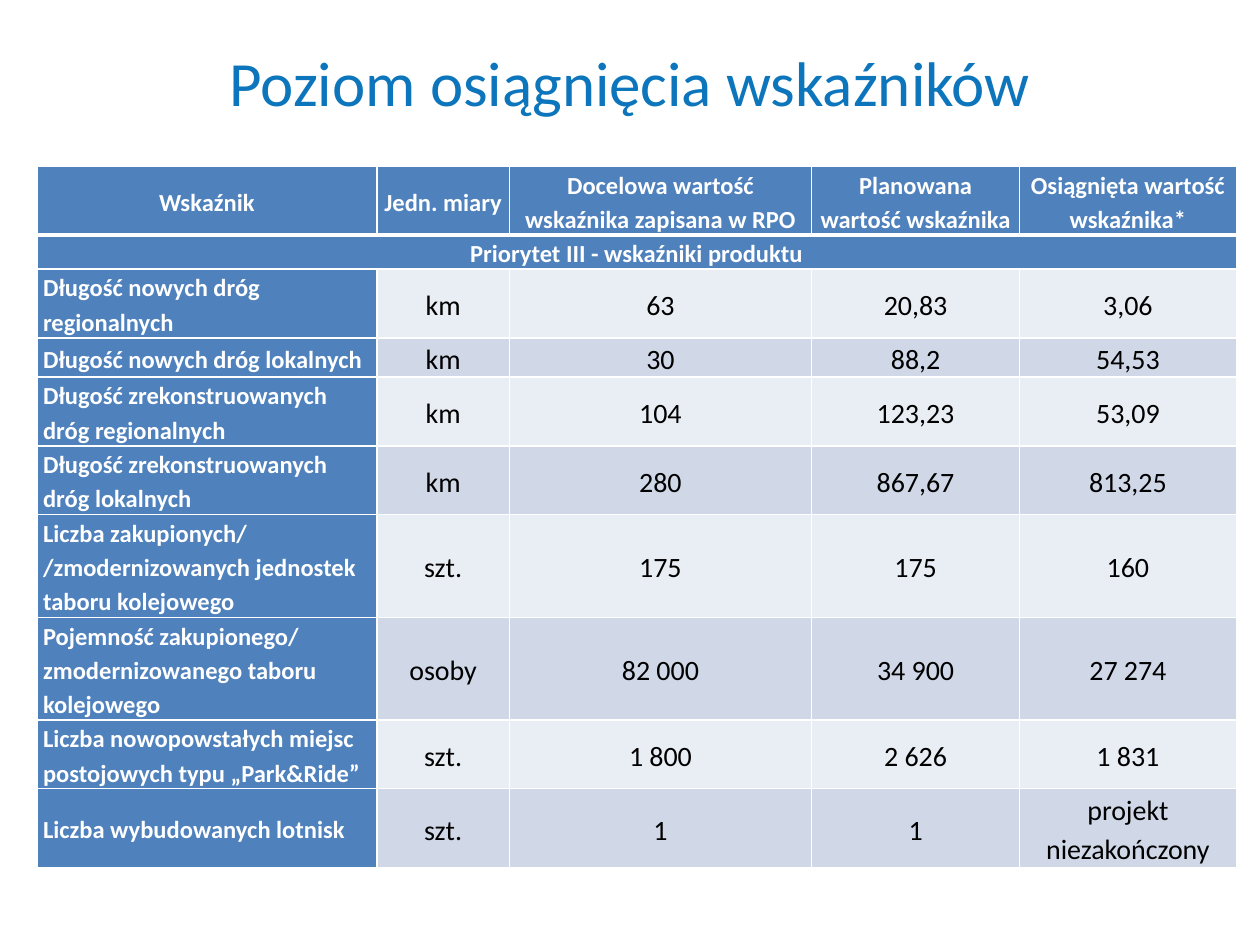
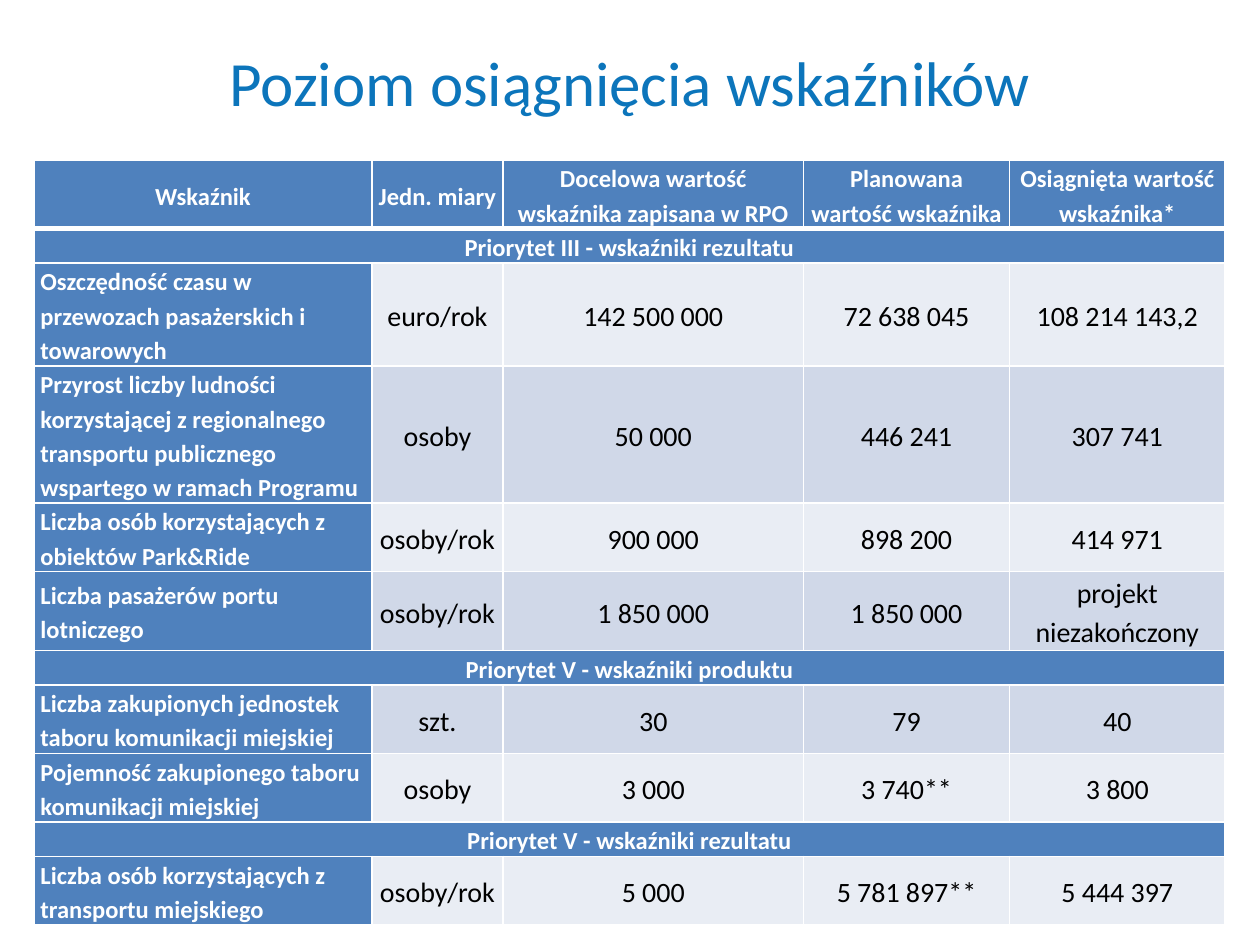
from lxml import etree
from pptx import Presentation
from pptx.dml.color import RGBColor
from pptx.enum import text
from pptx.oxml import ns
from pptx.util import Pt

TITLE = "Poziom osiągnięcia wskaźników"
HEADINGS = (
    "Wskaźnik",
    "Jedn. miary",
    "Docelowa wartość wskaźnika zapisana w RPO",
    "Planowana wartość wskaźnika",
    "Osiągnięta wartość wskaźnika*",
)
UNFINISHED = "projekt niezakończony"

PRODUCT_ROWS = [
    (1, "Priorytet III - wskaźniki produktu"),
    (2, "Długość nowych dróg regionalnych", "km", "63", "20,83", "3,06"),
    (1, "Długość nowych dróg lokalnych", "km", "30", "88,2", "54,53"),
    (2, "Długość zrekonstruowanych dróg regionalnych", "km", "104", "123,23", "53,09"),
    (2, "Długość zrekonstruowanych dróg lokalnych", "km", "280", "867,67", "813,25"),
    (3, "Liczba zakupionych/ /zmodernizowanych jednostek taboru kolejowego",
     "szt.", "175", "175", "160"),
    (3, "Pojemność zakupionego/ zmodernizowanego taboru kolejowego",
     "osoby", "82 000", "34 900", "27 274"),
    (2, "Liczba nowopowstałych miejsc postojowych typu „Park&Ride”",
     "szt.", "1 800", "2 626", "1 831"),
    (1, "Liczba wybudowanych lotnisk", "szt.", "1", "1", UNFINISHED),
]
RESULT_ROWS = [
    (1, "Priorytet III - wskaźniki rezultatu"),
    (3, "Oszczędność czasu w przewozach pasażerskich i towarowych",
     "euro/rok", "142 500 000", "72 638 045", "108 214 143,2"),
    (4, "Przyrost liczby ludności korzystającej z regionalnego transportu "
        "publicznego wspartego w ramach Programu",
     "osoby", "50 000", "446 241", "307 741"),
    (2, "Liczba osób korzystających z obiektów Park&Ride",
     "osoby/rok", "900 000", "898 200", "414 971"),
    (2, "Liczba pasażerów portu lotniczego",
     "osoby/rok", "1 850 000", "1 850 000", UNFINISHED),
    (1, "Priorytet V - wskaźniki produktu"),
    (2, "Liczba zakupionych jednostek taboru komunikacji miejskiej",
     "szt.", "30", "79", "40"),
    (2, "Pojemność zakupionego taboru komunikacji miejskiej",
     "osoby", "3 000", "3 740**", "3 800"),
    (1, "Priorytet V - wskaźniki rezultatu"),
    (2, "Liczba osób korzystających z transportu miejskiego",
     "osoby/rok", "5 000", "5 781 897**", "5 444 397"),
]
PAGES = [
    {"left": 21, "top": 95, "width": 685.5, "rows": PRODUCT_ROWS},
    {"left": 19.5, "top": 91.5, "width": 680.5, "rows": RESULT_ROWS},
]

COLORS = {
    "title": "0C75BB",
    "outline": "0570BD",
    "head": "4F81BD",
    "light": "E9EDF4",
    "dark": "D0D8E8",
    "white": "FFFFFF",
    "black": "000000",
}
FONT = "Calibri"
COLUMN_SHARES = (2.7, 1.05, 2.4, 1.65, 1.72)
LABEL_LINE = 19.5
VALUE_LINE = 22.3


def color(name):
    return RGBColor.from_string(COLORS[name])


def line_element(parent, tag, width, name):
    line = etree.SubElement(parent, ns.qn(tag), w=str(Pt(width)))
    fill = etree.SubElement(line, ns.qn("a:solidFill"))
    etree.SubElement(fill, ns.qn("a:srgbClr"), val=COLORS[name])
    return line


def style_font(para, size, name, bold=False):
    para.font.name = FONT
    para.font.size = Pt(size)
    para.font.bold = bold
    para.font.color.rgb = color(name)


def add_title(page):
    title = page.shapes.title
    title.left, title.top, title.width, title.height = Pt(36), Pt(1.5), Pt(648), Pt(90)
    frame = title.text_frame
    frame.vertical_anchor = text.MSO_ANCHOR.MIDDLE
    para = frame.paragraphs[0]
    para.alignment = text.PP_ALIGN.CENTER
    span = para.add_run()
    span.text = TITLE
    style_font(para, 36, "title")
    properties = span._r.get_or_add_rPr()
    properties.insert(0, line_element(properties, "a:ln", 0.75, "outline"))


def fill_cell(cell, content, fill, size, ink, bold, centered, bottom):
    cell.margin_left = cell.margin_right = Pt(3.6)
    cell.margin_top = cell.margin_bottom = 0
    cell.vertical_anchor = text.MSO_ANCHOR.MIDDLE
    properties = cell._tc.get_or_add_tcPr()
    for side, width in (("L", 1), ("R", 1), ("T", 1), ("B", bottom)):
        line_element(properties, f"a:ln{side}", width, "white")
    cell.fill.solid()
    cell.fill.fore_color.rgb = color(fill)
    if content:
        para = cell.text_frame.paragraphs[0]
        para.text = content
        para.line_spacing = 1.15
        para.alignment = text.PP_ALIGN.CENTER if centered else text.PP_ALIGN.LEFT
        style_font(para, size, ink, bold)


def row_height(lines, cells):
    value_lines = 2 if UNFINISHED in cells else 1
    values = VALUE_LINE * value_lines if len(cells) > 1 else 0
    return max(lines * LABEL_LINE, values)


def add_indicators(page, left, top, width, rows):
    rows = [(2, *HEADINGS), *rows]
    heights = [row_height(lines, cells) for lines, *cells in rows]
    frame = page.shapes.add_table(
        len(rows), len(HEADINGS), Pt(left), Pt(top), Pt(width), Pt(sum(heights)))
    table = frame.table
    table.first_col = True
    for column, share in zip(table.columns, COLUMN_SHARES):
        column.width = Pt(width * share / sum(COLUMN_SHARES))
    for index, (lines, *cells) in enumerate(rows):
        table.rows[index].height = Pt(heights[index])
        section = len(cells) == 1
        if section:
            table.cell(index, 0).merge(table.cell(index, len(HEADINGS) - 1))
            cells += [""] * (len(HEADINGS) - 1)
        for position, content in enumerate(cells):
            heading = index == 0 or section or position == 0
            band = "dark" if index % 2 else "light"
            fill_cell(
                table.cell(index, position), content,
                fill="head" if heading else band,
                size=14 if heading else 16,
                ink="white" if heading else "black",
                bold=heading,
                centered=index == 0 or section or position > 0,
                bottom=3 if index == 0 else 1)


def main():
    deck = Presentation()
    deck.slide_width, deck.slide_height = Pt(720), Pt(540)
    for content in PAGES:
        page = deck.slides.add_slide(deck.slide_layouts[5])
        add_title(page)
        add_indicators(page, **content)
    deck.save("out.pptx")


if __name__ == "__main__":
    main()
